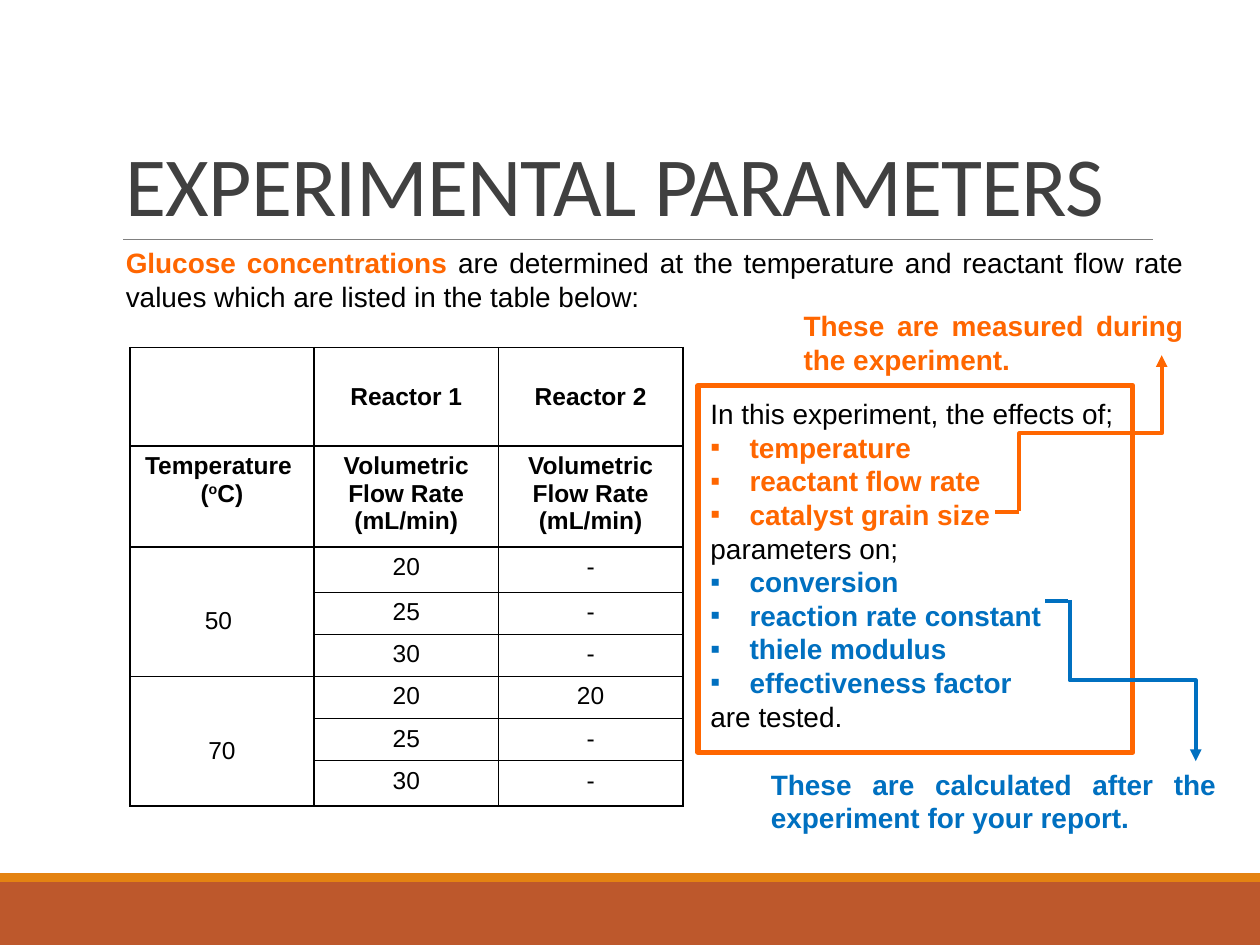
from lxml import etree
from pptx import Presentation
from pptx.dml.color import RGBColor
from pptx.enum.shapes import MSO_CONNECTOR, MSO_SHAPE
from pptx.enum.text import MSO_ANCHOR, PP_ALIGN
from pptx.oxml.ns import qn
from pptx.util import Inches, Pt

STRAIGHT, ELBOW = MSO_CONNECTOR.STRAIGHT, MSO_CONNECTOR.ELBOW
RECTANGLE = MSO_SHAPE.RECTANGLE
TOP, MIDDLE, BOTTOM = MSO_ANCHOR.TOP, MSO_ANCHOR.MIDDLE, MSO_ANCHOR.BOTTOM
LEFT, CENTER, JUSTIFY = PP_ALIGN.LEFT, PP_ALIGN.CENTER, PP_ALIGN.JUSTIFY
COLORS = {
    "black": "000000", "title": "404040", "rule": "808080", "orange": "FF6600",
    "blue": "0070C0", "band": "BD582C", "stripe": "E48312",
}


def color(name):
    return RGBColor.from_string(COLORS[name])


def add_run(paragraph, text, size=16, font="Arial", ink="black", bold=False,
            baseline=None, spacing=None):
    run = paragraph.add_run()
    run.text = text
    run.font.size = Pt(size)
    run.font.name = font
    run.font.bold = bold
    run.font.color.rgb = color(ink)
    properties = run.font._element
    if baseline:
        properties.set("baseline", str(baseline * 1000))
    if spacing:
        properties.set("spc", str(int(spacing * 100)))


def add_bullet(paragraph):
    properties = paragraph._p.get_or_add_pPr()
    properties.set("marL", str(Inches(0.31)))
    properties.set("indent", str(Inches(-0.31)))
    etree.SubElement(properties, qn("a:buFont"), typeface="Arial")
    etree.SubElement(properties, qn("a:buChar"), char="▪")


def add_borders(cell):
    properties = cell._tc.get_or_add_tcPr()
    for index, side in enumerate(("lnL", "lnR", "lnT", "lnB")):
        border = etree.Element(qn(f"a:{side}"), w=str(Pt(1)))
        fill = etree.SubElement(border, qn("a:solidFill"))
        etree.SubElement(fill, qn("a:srgbClr"), val=COLORS["black"])
        properties.insert(index, border)


class SlideBuilder:
    """Adds styled elements to one slide."""

    def __init__(self, slide):
        self.slide = slide

    def rectangle(self, box, fill=None, line=None):
        shape = self.slide.shapes.add_shape(RECTANGLE, *map(Inches, box))
        shape.shadow.inherit = False
        if fill:
            shape.fill.solid()
            shape.fill.fore_color.rgb = color(fill)
        else:
            shape.fill.background()
        if line:
            shape.line.color.rgb = color(line)
            shape.line.width = Pt(3)
        else:
            shape.line.fill.background()

    def text(self, box, paragraphs, align=LEFT, anchor=TOP, line_spacing=None):
        frame = self.slide.shapes.add_textbox(*map(Inches, box)).text_frame
        frame.word_wrap = True
        frame.vertical_anchor = anchor
        for index, (runs, bulleted) in enumerate(paragraphs):
            paragraph = frame.add_paragraph() if index else frame.paragraphs[0]
            paragraph.alignment = align
            if line_spacing:
                paragraph.line_spacing = line_spacing
            if bulleted:
                add_bullet(paragraph)
            for text, style in runs:
                add_run(paragraph, text, **style)

    def line(self, start, end, ink, width=2.25, kind=STRAIGHT):
        connector = self.slide.shapes.add_connector(kind, *map(Inches, (*start, *end)))
        connector.line.color.rgb = color(ink)
        connector.line.width = Pt(width)
        etree.SubElement(connector._element.spPr, qn("a:effectLst"))
        return connector

    def vertical_elbow_arrow(self, start, end, ink):
        center_x, center_y = (start[0] + end[0]) / 2, (start[1] + end[1]) / 2
        across, down = start[0] - center_x, start[1] - center_y
        connector = self.line((center_x + down, center_y - across),
                              (center_x - down, center_y + across), ink, kind=ELBOW)
        connector._element.spPr.find(qn("a:xfrm")).set("rot", str(90 * 60000))
        etree.SubElement(connector.line._get_or_add_ln(), qn("a:tailEnd"), type="triangle")

    def table(self, box, heights, rows, merges):
        table = self.slide.shapes.add_table(len(rows), len(rows[0]), *map(Inches, box)).table
        table.first_row = table.horz_banding = False
        for row, height in zip(table.rows, heights):
            row.height = Inches(height)
        for row_index, values in enumerate(rows):
            for column_index, lines in enumerate(values):
                cell = table.cell(row_index, column_index)
                cell.fill.background()
                add_borders(cell)
                cell.vertical_anchor = TOP if row_index else MIDDLE
                for index, runs in enumerate(lines):
                    frame = cell.text_frame
                    paragraph = frame.add_paragraph() if index else frame.paragraphs[0]
                    paragraph.alignment = CENTER
                    for text, baseline in runs:
                        add_run(paragraph, text, size=14, bold=row_index < 2,
                                baseline=baseline)
        for first, last in merges:
            table.cell(first, 0).merge(table.cell(last, 0))
            table.cell(first, 0).margin_top = Inches(0.48)


def plain(text):
    return [[(text, None)]] if text else []


def styled(text, ink="black", bulleted=False):
    return [(text, {"ink": ink, "bold": ink != "black"})], bulleted


def main():
    presentation = Presentation()
    presentation.slide_width, presentation.slide_height = Inches(10), Inches(7.5)
    builder = SlideBuilder(presentation.slides.add_slide(presentation.slide_layouts[6]))

    builder.rectangle((0, 7, 10, 0.5), fill="band")
    builder.rectangle((0, 6.93, 10, 0.07), fill="stripe")
    builder.line((0.98, 1.9), (9.15, 1.9), "rule", width=0.5)
    title_style = {"size": 48, "font": "Calibri", "ink": "title", "spacing": -0.5}
    builder.text((0.9, 0.31, 8.25, 1.59),
                 [([("EXPERIMENTAL PARAMETERS", title_style)], False)],
                 anchor=BOTTOM, line_spacing=0.85)

    temperature = [[("Temperature ", None)], [("(", None), ("o", 30), ("C)", None)]]
    flow_rate = plain("Volumetric Flow Rate (mL/min)")
    measurements = [("50 ", "20", "-"), ("", "25", "-"), ("", "30", "-"),
                    ("70", "20", "20"), ("", "25", "-"), ("", "30", "-")]
    rows = [[plain(text) for text in ("", "Reactor 1", "Reactor 2")],
            [temperature, flow_rate, flow_rate]]
    rows += [[plain(text) for text in values] for values in measurements]
    builder.table((1.03, 2.76, 4.39, 3.66),
                  (0.78, 0.78, 0.36, 0.32, 0.32, 0.32, 0.32, 0.36),
                  rows, merges=((2, 4), (5, 7)))

    measured = ("temperature", "reactant flow rate", "catalyst grain size")
    calculated = ("conversion", "reaction rate constant", "thiele modulus",
                  "effectiveness factor")
    builder.text((5.54, 3.1, 3.59, 2.79), [
        styled("In this experiment, the effects of;"),
        *(styled(text, "orange", True) for text in measured),
        styled("parameters on;"),
        *(styled(text, "blue", True) for text in calculated),
        styled("are tested."),
    ])
    builder.rectangle((5.54, 3.06, 3.45, 2.91), line="orange")

    introduction = [
        ("Glucose concentrations ", {"ink": "orange", "bold": True}),
        ("are determined at the temperature and reactant flow rate values "
         "which are listed in the table below:", {}),
    ]
    builder.text((0.9, 1.9, 8.59, 0.64), [(introduction, False)], align=JUSTIFY)
    builder.text((6.28, 2.4, 3.21, 0.64),
                 [styled("These are measured during the experiment.", "orange")],
                 align=JUSTIFY)
    builder.text((6.02, 6.04, 3.73, 0.64),
                 [styled("These are calculated after the experiment for your report.", "blue")],
                 align=JUSTIFY)

    builder.vertical_elbow_arrow((8.09, 4.06), (9.22, 2.82), "orange")
    builder.line((8.09, 4.06), (7.9, 4.06), "orange")
    builder.vertical_elbow_arrow((8.49, 4.76), (9.49, 6.04), "blue")
    builder.line((8.48, 4.77), (8.29, 4.77), "blue")
    presentation.save("out.pptx")


if __name__ == "__main__":
    main()
